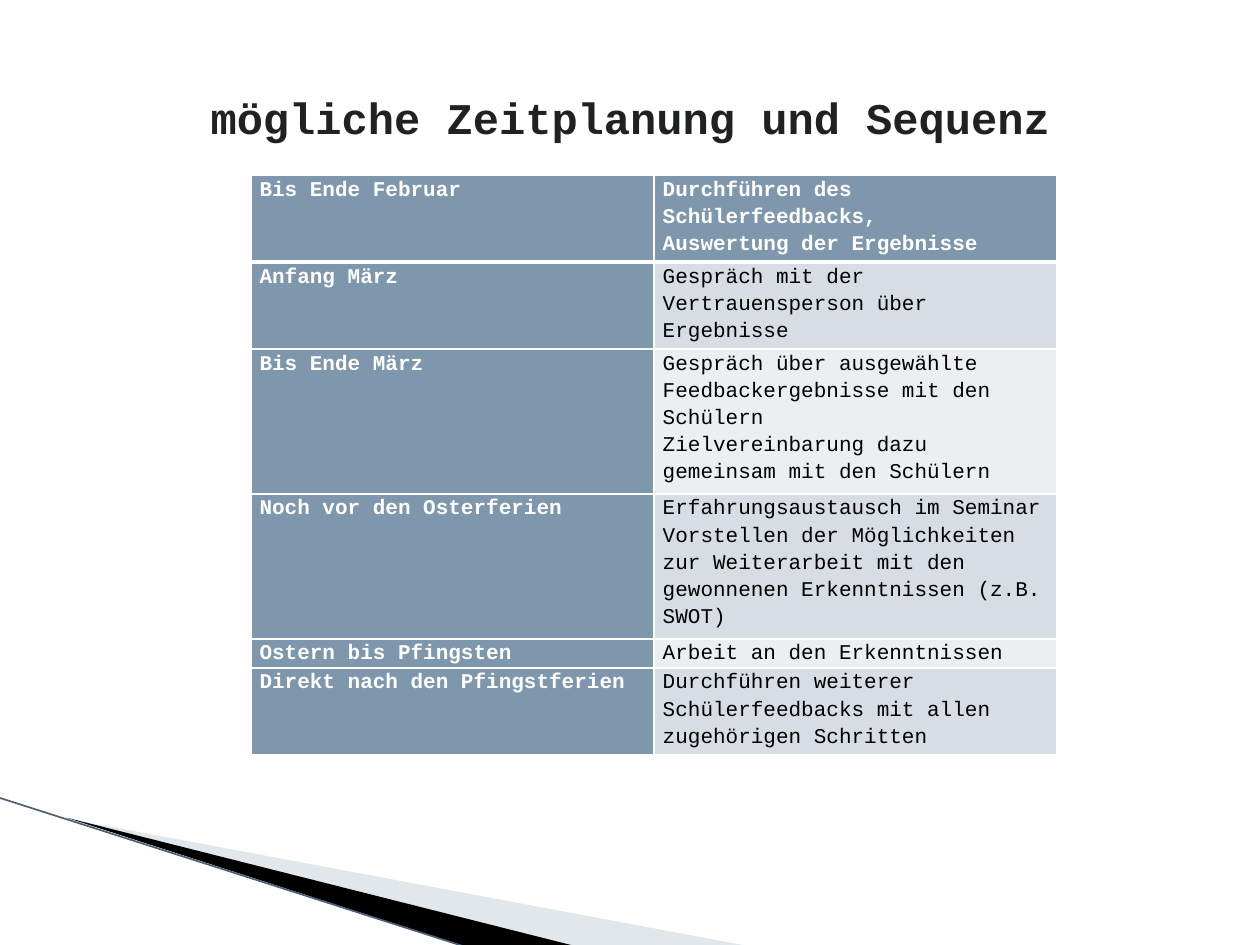
import pptx
import pptx.util
import pptx.dml.color
import pptx.enum.shapes
import pptx.enum.text
import pptx.oxml
import pptx.oxml.ns

Inches = pptx.util.Inches
Pt = pptx.util.Pt
FONT = "Courier New"
LINE = 0.21
BLUE, GREY, PALE = "7E97AD", "D8DDE3", "ECEFF1"
HEAD = {"name": FONT, "size": Pt(12), "bold": True}
BODY = {"name": FONT, "size": Pt(12), "bold": False}
TITLE = {"name": FONT, "size": Pt(25), "bold": True}
INSETS = {"margin_left": Inches(0.07), "margin_right": Inches(0.07),
          "margin_top": 0, "margin_bottom": 0}
PLAN = [
    (3, "Bis Ende Februar",
     ["Durchführen des Schülerfeedbacks,", "Auswertung der Ergebnisse"]),
    (3, "Anfang März",
     ["Gespräch mit der Vertrauensperson über Ergebnisse"]),
    (5, "Bis Ende März",
     ["Gespräch über ausgewählte Feedbackergebnisse mit den Schülern",
      "Zielvereinbarung dazu gemeinsam mit den Schülern"]),
    (5, "Noch vor den Osterferien",
     ["Erfahrungsaustausch im Seminar",
      "Vorstellen der Möglichkeiten zur Weiterarbeit mit den gewonnenen "
      "Erkenntnissen (z.B. SWOT)"]),
    (1, "Ostern bis Pfingsten", ["Arbeit an den Erkenntnissen"]),
    (3, "Direkt nach den Pfingstferien",
     ["Durchführen weiterer Schülerfeedbacks mit allen zugehörigen Schritten"]),
]


def color(code):
    return pptx.dml.color.RGBColor.from_string(code)


def apply(target, values):
    for name, value in values.items():
        setattr(target, name, value)


def write(frame, lines, style, ink, **layout):
    for i, line in enumerate(lines):
        para = frame.paragraphs[0] if i == 0 else frame.add_paragraph()
        apply(para, layout)
        run = para.add_run()
        run.text = line
        apply(run.font, style)
        run.font.color.rgb = color(ink)


def add_wedge(slide, points, fill, alpha=None):
    corners = [(Inches(x), Inches(y)) for x, y in points]
    pen = slide.shapes.build_freeform(*corners[0])
    pen.add_line_segments(corners[1:], close=True)
    shape = pen.convert_to_shape()
    shape.shadow.inherit = False
    shape.fill.solid()
    shape.fill.fore_color.rgb = color(fill)
    shape.line.fill.background()
    if alpha:
        tone = shape.fill._xPr.find(".//" + pptx.oxml.ns.qn("a:srgbClr"))
        tone.append(pptx.oxml.parse_xml(
            f'<a:alpha {pptx.oxml.ns.nsdecls("a")} val="{alpha * 1000}"/>'))


def add_line(slide, start, end, ink, width):
    line = slide.shapes.add_connector(
        pptx.enum.shapes.MSO_CONNECTOR.STRAIGHT,
        *map(Inches, start + end))
    line.line.color.rgb = color(ink)
    line.line.width = Pt(width)
    line._element.spPr.append(pptx.oxml.parse_xml(
        f'<a:effectLst {pptx.oxml.ns.nsdecls("a")}/>'))


def add_title(slide, text):
    box = slide.shapes.add_textbox(*map(Inches, (0.5, 0.3, 9, 1.25)))
    apply(box.text_frame, {
        "word_wrap": True,
        "vertical_anchor": pptx.enum.text.MSO_ANCHOR.MIDDLE})
    write(box.text_frame, [text], TITLE, "1F2123",
          alignment=pptx.enum.text.PP_ALIGN.CENTER)


def add_edges(cell, widths):
    props = cell._tc.get_or_add_tcPr()
    for side, width in widths.items():
        props.append(pptx.oxml.parse_xml(
            f'<a:ln{side} {pptx.oxml.ns.nsdecls("a")} w="{Pt(width)}">'
            '<a:solidFill><a:srgbClr val="FFFFFF"/></a:solidFill>'
            f'</a:ln{side}>'))


def fill_cell(cell, lines, style, ink, fill, edges):
    apply(cell, INSETS)
    add_edges(cell, edges)
    cell.fill.solid()
    cell.fill.fore_color.rgb = color(fill)
    write(cell.text_frame, lines, style, ink, line_spacing=1.15)


def add_plan(slide):
    total = LINE * sum(row[0] for row in PLAN)
    table = slide.shapes.add_table(
        len(PLAN), 2, *map(Inches, (1.99, 1.39, 6.4, total))).table
    table.horz_banding = False
    for i, (count, date, steps) in enumerate(PLAN):
        table.rows[i].height = Inches(LINE * count)
        edges = {"L": 1, "R": 1, "T": 3 if i == 1 else 1,
                 "B": 3 if i == 0 else 1}
        fill_cell(table.cell(i, 0), [date], HEAD, "FFFFFF", BLUE, edges)
        if i == 0:
            look = HEAD, "FFFFFF", BLUE
        else:
            look = BODY, "000000", GREY if i % 2 else PALE
        fill_cell(table.cell(i, 1), steps, *look, edges)


def main():
    deck = pptx.Presentation()
    apply(deck, {"slide_width": Inches(10), "slide_height": Inches(7.5)})
    slide = deck.slides.add_slide(deck.slide_layouts[6])
    add_wedge(slide, [(0.55, 6.5), (5.95, 7.51), (4.56, 7.51)], "B7C4D0", 40)
    add_wedge(slide, [(0.53, 6.49), (4.57, 7.51), (3.72, 7.52)], "000000")
    add_line(slide, (-0.01, 6.33), (3.71, 7.52), "4A6078", 0.95)
    add_title(slide, "mögliche Zeitplanung und Sequenz")
    add_plan(slide)
    deck.save("out.pptx")


if __name__ == "__main__":
    main()
